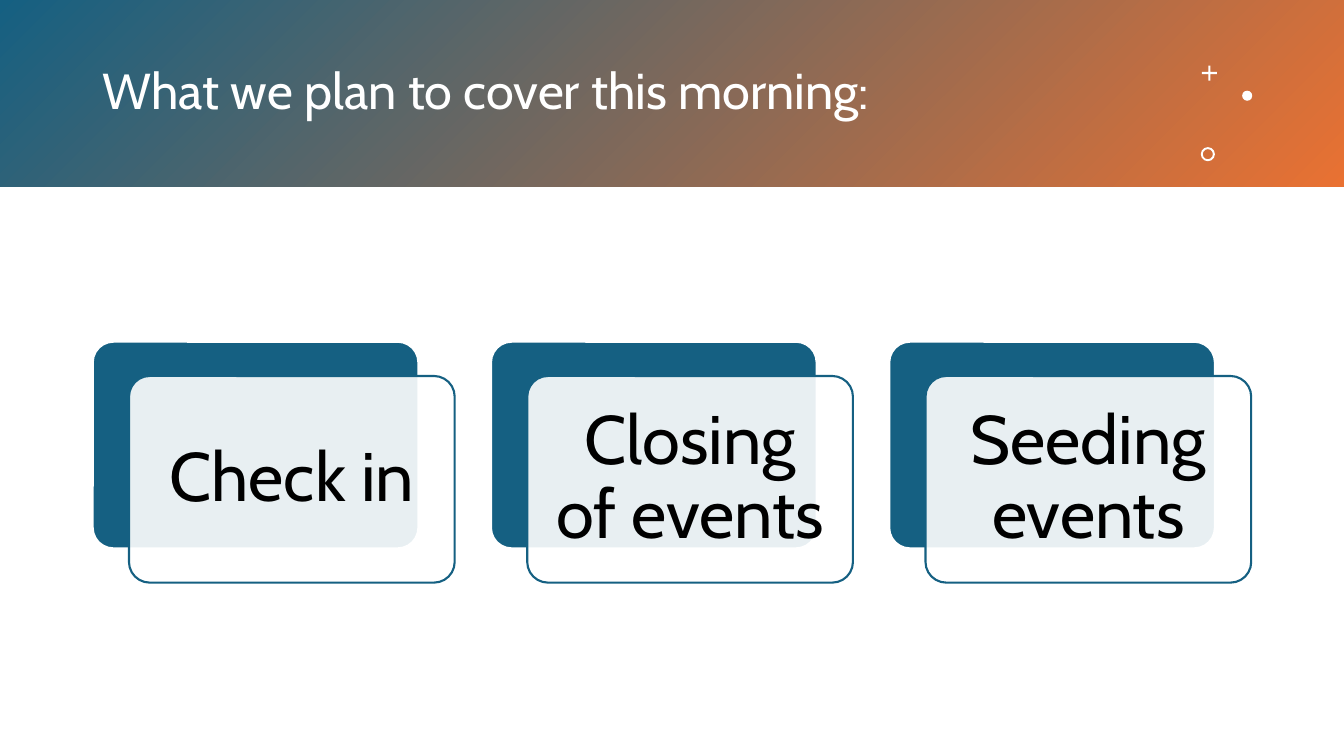
from lxml import etree
from pptx import Presentation
from pptx.dml.color import RGBColor
from pptx.enum.shapes import MSO_SHAPE
from pptx.enum.text import MSO_ANCHOR, PP_ALIGN
from pptx.oxml.ns import qn
from pptx.util import Inches, Pt

RECT, ROUNDED = MSO_SHAPE.RECTANGLE, MSO_SHAPE.ROUNDED_RECTANGLE
PLUS, DOT, RING = MSO_SHAPE.CROSS, MSO_SHAPE.OVAL, MSO_SHAPE.DONUT
MIDDLE = MSO_ANCHOR.MIDDLE
LEFT, CENTER = PP_ALIGN.LEFT, PP_ALIGN.CENTER

FONT = "Cabin"
BLUE, ORANGE, WHITE, BLACK = "156082", "E97132", "FFFFFF", "000000"

AGENDA = ["Check in", "Closing of events", "Seeding events"]
CARD_LEFT, CARD_TOP, CARD_PITCH = 0.92, 3.39, 3.95
CARD_WIDTH, CARD_HEIGHT = 3.23, 2.05
CARD_SHIFT_X, CARD_SHIFT_Y = 0.36, 0.34


def color(hex_string):
    return RGBColor.from_string(hex_string)


def add_box(slide, kind, left, top, width, height, fill=None, line=None,
            adjust=None, opacity=None):
    """Add a preset shape without shadow; opacity is a percentage."""
    box = slide.shapes.add_shape(
        kind, Inches(left), Inches(top), Inches(width), Inches(height))
    box.shadow.inherit = False
    if adjust is not None:
        box.adjustments[0] = adjust
    if fill:
        box.fill.solid()
        box.fill.fore_color.rgb = color(fill)
    if opacity is not None:
        rgb = box.fill._xPr.find(qn("a:solidFill"))[0]
        etree.SubElement(rgb, qn("a:alpha")).set("val", str(opacity * 1000))
    if line:
        box.line.color.rgb = color(line)
        box.line.width = Pt(1.5)
    else:
        box.line.fill.background()
    return box


def write_text(holder, text, size, font_color, align=LEFT, inset=None):
    frame = holder.text_frame
    frame.word_wrap = True
    frame.vertical_anchor = MIDDLE
    if inset is not None:
        frame.margin_left = frame.margin_right = Inches(inset)
        frame.margin_top = frame.margin_bottom = Inches(inset)
    paragraph = frame.paragraphs[0]
    paragraph.alignment = align
    paragraph.line_spacing = 0.9
    run = paragraph.add_run()
    run.text = text
    run.font.name = FONT
    run.font.size = Pt(size)
    run.font.color.rgb = color(font_color)


def add_header(slide, title):
    # Gradient band, running from top left to bottom right
    band = add_box(slide, RECT, 0, 0, 13.33, 1.85)
    band.fill.gradient()
    band.fill.gradient_angle = 315
    for stop, position, shade in zip(band.fill.gradient_stops, (0, 1), (BLUE, ORANGE)):
        stop.position = position
        stop.color.rgb = color(shade)

    # Title
    heading = slide.shapes.add_textbox(
        Inches(0.92), Inches(0.33), Inches(10.75), Inches(1.19))
    write_text(heading, title, size=36, font_color=WHITE)

    # Small ornaments on the right
    for kind, left, top, size, adjust in (
            (PLUS, 11.92, 0.65, 0.15, 0.43),
            (DOT, 12.32, 0.9, 0.1, None),
            (RING, 11.91, 1.46, 0.14, 0.14)):
        add_box(slide, kind, left, top, size, size, fill=WHITE, adjust=adjust)


def add_card(slide, left, topic):
    """Blue back plate with a translucent labelled plate shifted over it."""
    add_box(slide, ROUNDED, left, CARD_TOP, CARD_WIDTH, CARD_HEIGHT,
            fill=BLUE, line=WHITE, adjust=0.1)
    front = add_box(slide, ROUNDED, left + CARD_SHIFT_X, CARD_TOP + CARD_SHIFT_Y,
                    CARD_WIDTH, CARD_HEIGHT,
                    fill=WHITE, line=BLUE, adjust=0.1, opacity=90)
    write_text(front, topic, size=49, font_color=BLACK, align=CENTER, inset=0.2)


def main():
    deck = Presentation()
    deck.slide_width, deck.slide_height = Inches(13.33), Inches(7.5)
    slide = deck.slides.add_slide(deck.slide_layouts[6])

    add_header(slide, "What we plan to cover this morning:")

    # Agenda cards
    for index, topic in enumerate(AGENDA):
        add_card(slide, CARD_LEFT + index * CARD_PITCH, topic)

    deck.save("out.pptx")


if __name__ == "__main__":
    main()
